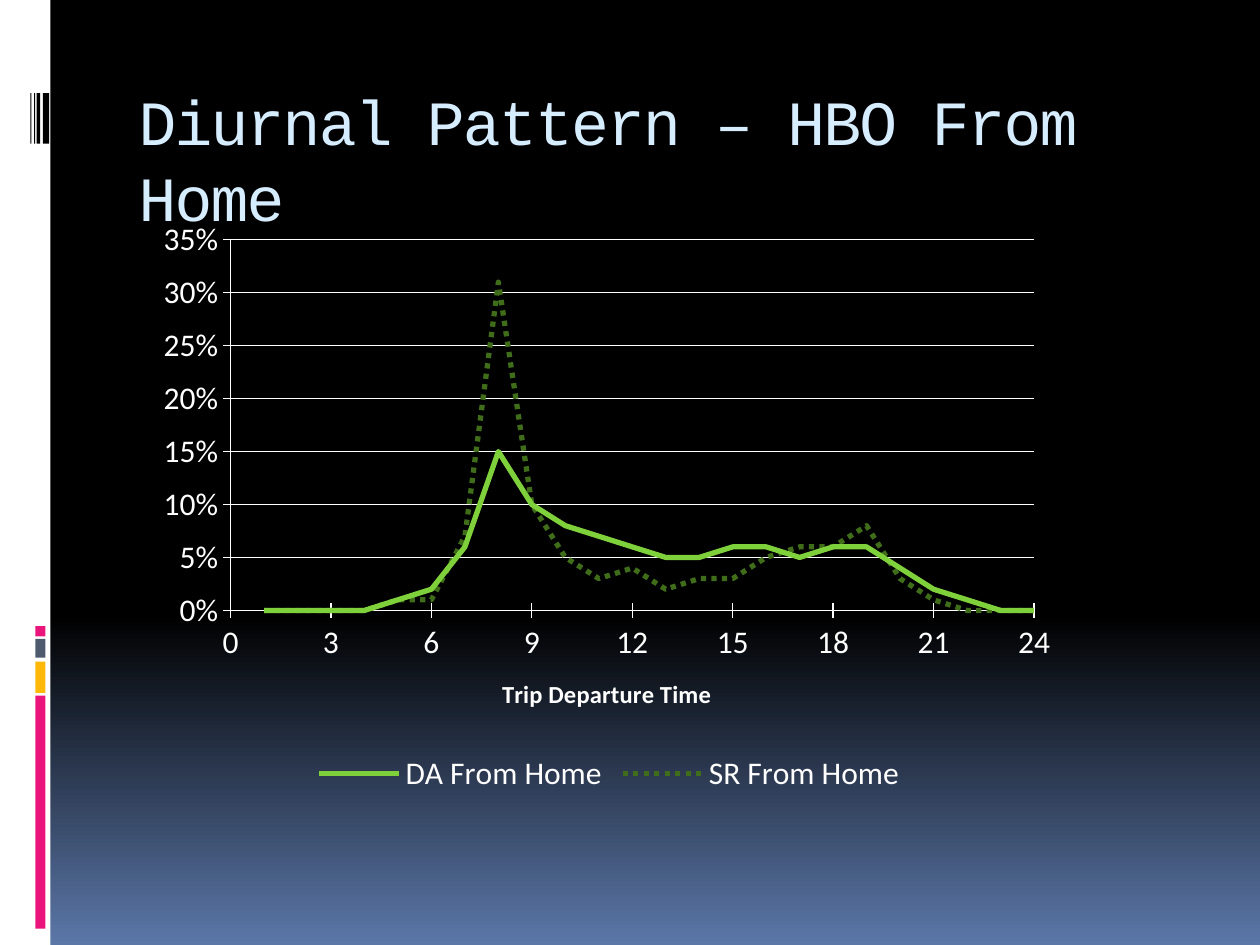
"""Build a slide charting the diurnal pattern of home-based trips leaving home."""
import copy

import pptx
import pptx.chart.data
import pptx.dml.color
import pptx.enum.chart
import pptx.enum.dml
import pptx.enum.shapes
import pptx.enum.text
import pptx.oxml
import pptx.util
from dataclasses import dataclass

TITLE = "Diurnal Pattern – HBO From Home"
HOUR_TITLE = "Trip Departure Time"
SHARES = {
    "DA From Home": [0, 0, 0, 0, 1, 2, 6, 15, 10, 8, 7, 6,
                     5, 5, 6, 6, 5, 6, 6, 4, 2, 1, 0, 0],
    "SR From Home": [0, 0, 0, 0, 1, 1, 7, 31, 10, 5, 3, 4,
                     2, 3, 3, 5, 6, 6, 8, 3, 1, 0, 0, 0],
}


@dataclass(frozen=True)
class Theme:
    """Colours, fonts and type sizes of the slide."""
    white: str = "FFFFFF"
    black: str = "000000"
    pink: str = "EA157A"
    amber: str = "FEB80A"
    slate: str = "4E5B6F"
    blue: str = "5B77A8"
    pale: str = "D6ECFF"
    greens: tuple = ("7FD13B", "3F6D19")
    title_font: str = "Courier New"
    chart_font: str = "Calibri"
    title_size: int = 36
    label_size: int = 18
    caption_size: int = 14


THEME = Theme()
WIDTH, HEIGHT = 10, 7.5
BAND_WIDTH = 0.4
BLOCK_LEFT, BLOCK_WIDTH = 0.28, 0.08
BLOCKS = [(4.97, 0.08, THEME.pink), (5.07, 0.15, THEME.slate),
          (5.25, 0.25, THEME.amber), (5.52, 1.85, THEME.pink)]
BARCODE_TOP, BARCODE_HEIGHT = 0.74, 0.4
BARCODE = [(0.34, 0.05), (0.29, 0.03), (0.27, 0.01), (0.24, 0.01)]
TITLE_BOX = (1, 0.56, 8.5, 1)
CHART_BOX = (1.17, 1.67, 7.33, 4.67)
PLOT_SHARES = {"x": 0.09, "y": 0.05, "w": 0.87, "h": 0.63}


def rgb(code):
    return pptx.dml.color.RGBColor.from_string(code)


def inches(box):
    return [pptx.util.Inches(length) for length in box]


def style_font(font, size, color, face, bold=False):
    font.size, font.name, font.bold = pptx.util.Pt(size), face, bold
    font.color.rgb = rgb(color)


def write(frame, text, spacing=0, line=None, **style):
    frame.text = text
    paragraph = frame.paragraphs[0]
    if line:
        paragraph.line_spacing = pptx.util.Pt(line)
    run = paragraph.runs[0]
    style_font(run.font, **style)
    if spacing:
        run.font._element.set("spc", str(spacing * 100))


def paint_background(slide):
    fill = slide.background.fill
    fill.gradient()
    fill.gradient_angle = 270
    first = fill.gradient_stops[0]._gs
    first.addnext(copy.deepcopy(first))
    colors = (THEME.black, THEME.black, THEME.blue)
    for stop, position, color in zip(fill.gradient_stops, (0, 0.65, 1), colors):
        stop.position = position
        stop.color.rgb = rgb(color)


def add_block(slide, box, color):
    block = slide.shapes.add_shape(
        pptx.enum.shapes.MSO_SHAPE.RECTANGLE, *inches(box))
    block.shadow.inherit = False
    block.fill.solid()
    block.fill.fore_color.rgb = rgb(color)
    block.line.fill.background()


def add_sidebar(slide):
    add_block(slide, (0, 0, BAND_WIDTH, HEIGHT), THEME.white)
    for top, height, color in BLOCKS:
        add_block(slide, (BLOCK_LEFT, top, BLOCK_WIDTH, height), color)
    for left, width in BARCODE:
        add_block(slide, (left, BARCODE_TOP, width, BARCODE_HEIGHT), THEME.black)


def add_title(slide):
    title = slide.shapes.title
    title.left, title.top, title.width, title.height = inches(TITLE_BOX)
    frame = title.text_frame
    frame.word_wrap = True
    frame.auto_size = pptx.enum.text.MSO_AUTO_SIZE.NONE
    frame.vertical_anchor = pptx.enum.text.MSO_ANCHOR.TOP
    frame.margin_top = pptx.util.Inches(0.1)
    write(frame, TITLE, spacing=-1, line=43, size=THEME.title_size,
          color=THEME.pale, face=THEME.title_font)
    frame.paragraphs[0].alignment = pptx.enum.text.PP_ALIGN.LEFT


def format_axis(axis, top, step, number_format):
    axis.minimum_scale, axis.maximum_scale, axis.major_unit = 0, top, step
    axis.major_tick_mark = pptx.enum.chart.XL_TICK_MARK.CROSS
    axis.minor_tick_mark = pptx.enum.chart.XL_TICK_MARK.NONE
    axis.format.line.color.rgb = rgb(THEME.white)
    labels = axis.tick_labels
    labels.number_format, labels.number_format_is_linked = number_format, False
    style_font(labels.font, THEME.label_size, THEME.white, THEME.chart_font)


def place_plot(chart):
    area = chart._chartSpace.chart.plotArea
    for layout in area.findall(pptx.oxml.ns.qn("c:layout")):
        area.remove(layout)
    modes = '<c:layoutTarget val="inner"/><c:xMode val="edge"/><c:yMode val="edge"/>'
    shares = "".join(f'<c:{side} val="{share}"/>' for side, share in PLOT_SHARES.items())
    area.insert(0, pptx.oxml.parse_xml(
        f'<c:layout {pptx.oxml.ns.nsdecls("c")}><c:manualLayout>'
        f"{modes}{shares}</c:manualLayout></c:layout>"))


def add_trip_chart(slide):
    trips = pptx.chart.data.XyChartData(number_format="0%")
    for name, percents in SHARES.items():
        series = trips.add_series(name)
        for hour, percent in enumerate(percents, start=1):
            series.add_data_point(hour, percent / 100)
    chart = slide.shapes.add_chart(
        pptx.enum.chart.XL_CHART_TYPE.XY_SCATTER_LINES_NO_MARKERS,
        *inches(CHART_BOX), trips).chart
    style_font(chart.font, 10, THEME.white, THEME.chart_font)
    chart.has_title = False
    chart.plots[0].vary_by_categories = False
    place_plot(chart)

    hours, share = chart.category_axis, chart.value_axis
    format_axis(hours, 24, 3, "General")
    format_axis(share, 0.35, 0.05, "0%")
    hours.has_major_gridlines = False
    share.has_major_gridlines = True
    share.major_gridlines.format.line.color.rgb = rgb(THEME.white)
    write(hours.axis_title.text_frame, HOUR_TITLE, size=THEME.caption_size,
          color=THEME.white, face=THEME.chart_font, bold=True)

    chart.has_legend = True
    chart.legend.position = pptx.enum.chart.XL_LEGEND_POSITION.BOTTOM
    chart.legend.include_in_layout = False
    style_font(chart.legend.font, THEME.label_size, THEME.white, THEME.chart_font)

    dashes = (pptx.enum.dml.MSO_LINE.SOLID, pptx.enum.dml.MSO_LINE.ROUND_DOT)
    for series, color, dash in zip(chart.plots[0].series, THEME.greens, dashes):
        series.smooth = False
        line = series.format.line
        line.color.rgb, line.width, line.dash_style = rgb(color), pptx.util.Pt(3), dash


def main():
    deck = pptx.Presentation()
    deck.slide_width, deck.slide_height = inches((WIDTH, HEIGHT))
    slide = deck.slides.add_slide(deck.slide_layouts.get_by_name("Title Only"))
    paint_background(slide)
    add_sidebar(slide)
    add_title(slide)
    add_trip_chart(slide)
    deck.save("out.pptx")


if __name__ == "__main__":
    main()
